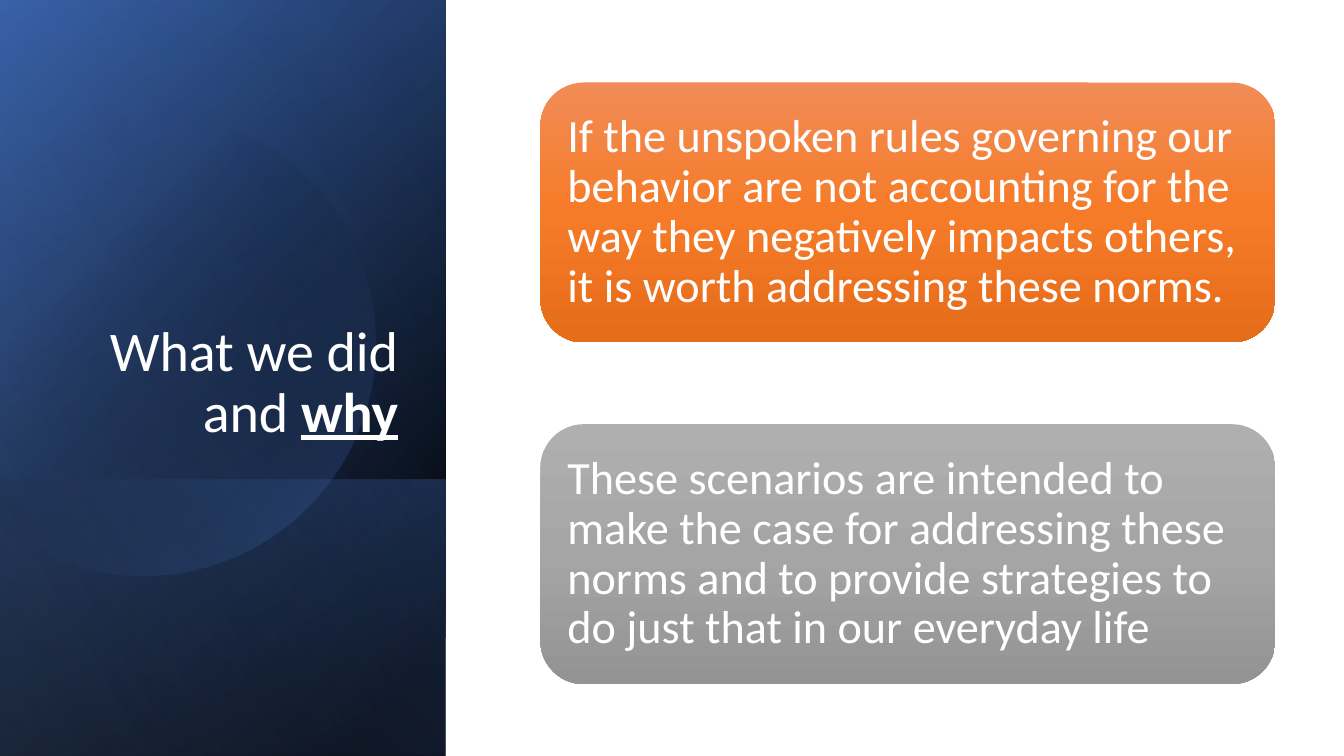
import math

from lxml import etree
from pptx import Presentation
from pptx import util as u
from pptx.dml.color import RGBColor
from pptx.enum import shapes, text
from pptx.oxml import ns

COLORS = {
    "white": "FFFFFF", "black": "000000", "navy": "2F5597", "blue": "4472C4", "sky": "8FAADC",
    "orange_light": "F18C57", "orange": "F67B28", "orange_dark": "E56C19",
    "gray_light": "AFAFAF", "gray": "A5A5A5", "gray_dark": "939393",
}
FONT = "Calibri"
SLIDE_W, SLIDE_H = 33.87, 19.05
PANEL_W = 11.23
CARDS = [
    ("If the unspoken rules governing our behavior are not accounting for the way "
     "they negatively impacts others, it is worth addressing these norms.", "orange"),
    ("These scenarios are intended to make the case for addressing these norms "
     "and to provide strategies to do just that in our everyday life", "gray"),
]


def apply(target, values):
    """Set each attribute of the target from a dict."""
    for name, value in values.items():
        setattr(target, name, value)


def paint(s, stops, angle):
    """Fill a shape with a linear gradient of (position, color, opacity) stops."""
    s.shadow.inherit = False
    s.line.fill.background()
    s.fill.background()
    grad = etree.Element(ns.qn("a:gradFill"), rotWithShape="1")
    stop_list = etree.SubElement(grad, ns.qn("a:gsLst"))
    for position, color, opacity in stops:
        stop = etree.SubElement(stop_list, ns.qn("a:gs"), pos=str(position * 1000))
        rgb = etree.SubElement(stop, ns.qn("a:srgbClr"), val=COLORS[color])
        if opacity < 100:
            etree.SubElement(rgb, ns.qn("a:alpha"), val=str(opacity * 1000))
    etree.SubElement(grad, ns.qn("a:lin"), ang=str(angle * 60000), scaled="0")
    sp_pr = s._element.spPr
    sp_pr.replace(sp_pr.find(ns.qn("a:noFill")), grad)


def add_run(p, words, **values):
    """Add a white run with the given font values."""
    r = p.add_run()
    r.text = words
    apply(r.font, {"name": FONT, **values})
    r.font.color.rgb = RGBColor.from_string(COLORS["white"])


def add_layer(slide, x, y, w, h, stops, angle):
    """Cover a box with a mirrored rectangle turned by a quarter."""
    s = slide.shapes.add_shape(shapes.MSO_SHAPE.RECTANGLE, u.Cm(x + (w - h) / 2),
                               u.Cm(y + (h - w) / 2), u.Cm(h), u.Cm(w))
    s.rotation = 90
    s._element.spPr.find(ns.qn("a:xfrm")).set("flipH", "1")
    paint(s, stops, angle)


def add_disc(slide, x, y, radius, left):
    """Draw a disc around x, y that is cut off at the left edge."""
    limit = math.acos((left - x) / radius)
    steps = 120
    angles = [limit * (2 * i / steps - 1) for i in range(steps + 1)]
    points = [(u.Cm(x + radius * math.cos(a)), u.Cm(y + radius * math.sin(a))) for a in angles]
    builder = slide.shapes.build_freeform(*points[0])
    builder.add_line_segments(points[1:], close=True)
    paint(builder.convert_to_shape(), [(29, "black", 0), (100, "blue", 43)], 45)


def add_panel(slide, x, y, w, h):
    """Build the dark side panel with its title."""
    foot = 6.96
    add_layer(slide, x, y, w, h, [(8, "black", 100), (100, "navy", 100)], 50)
    add_layer(slide, x, y, w, h, [(0, "black", 0), (99, "blue", 46)], 30)
    add_layer(slide, x, y + h - foot, w, foot, [(2, "blue", 29), (100, "black", 30)], 130)
    add_disc(slide, x + 3.6, y + 8.64, 5.87, x)
    add_layer(slide, x, y, w, h, [(0, "black", 0), (99, "sky", 11)], 120)

    title = slide.shapes.title
    apply(title, {"left": u.Cm(x + 1.63), "top": u.Cm(y + 4.67),
                  "width": u.Cm(8.66), "height": u.Cm(6.65)})
    tf = title.text_frame
    apply(tf, {"word_wrap": True, "auto_size": text.MSO_AUTO_SIZE.NONE,
               "vertical_anchor": text.MSO_ANCHOR.BOTTOM})
    p = tf.paragraphs[0]
    apply(p, {"alignment": text.PP_ALIGN.RIGHT, "line_spacing": 0.9})
    add_run(p, "What we did and ", size=u.Pt(40))
    add_run(p, "why", size=u.Pt(40), bold=True, underline=True)
    slide.shapes._spTree.append(title._element)


def add_card(slide, x, y, w, h, words, color):
    """Build one rounded card of text."""
    s = slide.shapes.add_shape(shapes.MSO_SHAPE.ROUNDED_RECTANGLE,
                               u.Cm(x), u.Cm(y), u.Cm(w), u.Cm(h))
    paint(s, [(0, f"{color}_light", 100), (50, color, 100), (100, f"{color}_dark", 100)], 90)
    tf = s.text_frame
    apply(tf, {f"margin_{side}": u.Cm(0.36) for side in ("left", "top", "right", "bottom")})
    apply(tf, {"word_wrap": True, "vertical_anchor": text.MSO_ANCHOR.MIDDLE})
    p = tf.paragraphs[0]
    apply(p, {"alignment": text.PP_ALIGN.LEFT, "line_spacing": 0.9})
    add_run(p, words, size=u.Pt(33))


def add_cards(slide, x, y, w, h):
    """Stack the cards in a box with a fixed gap."""
    gap = 2.06
    card_h = (h - gap * (len(CARDS) - 1)) / len(CARDS)
    for i, (words, color) in enumerate(CARDS):
        add_card(slide, x, y + i * (card_h + gap), w, card_h, words, color)


def main():
    """Build and save the slide."""
    prs = Presentation()
    apply(prs, {"slide_width": u.Cm(SLIDE_W), "slide_height": u.Cm(SLIDE_H)})
    slide = prs.slides.add_slide(prs.slide_layouts[5])
    add_panel(slide, 0, 0, PANEL_W, SLIDE_H)
    add_cards(slide, 13.62, 2.08, 18.52, 15.16)
    prs.save("out.pptx")


if __name__ == "__main__":
    main()
